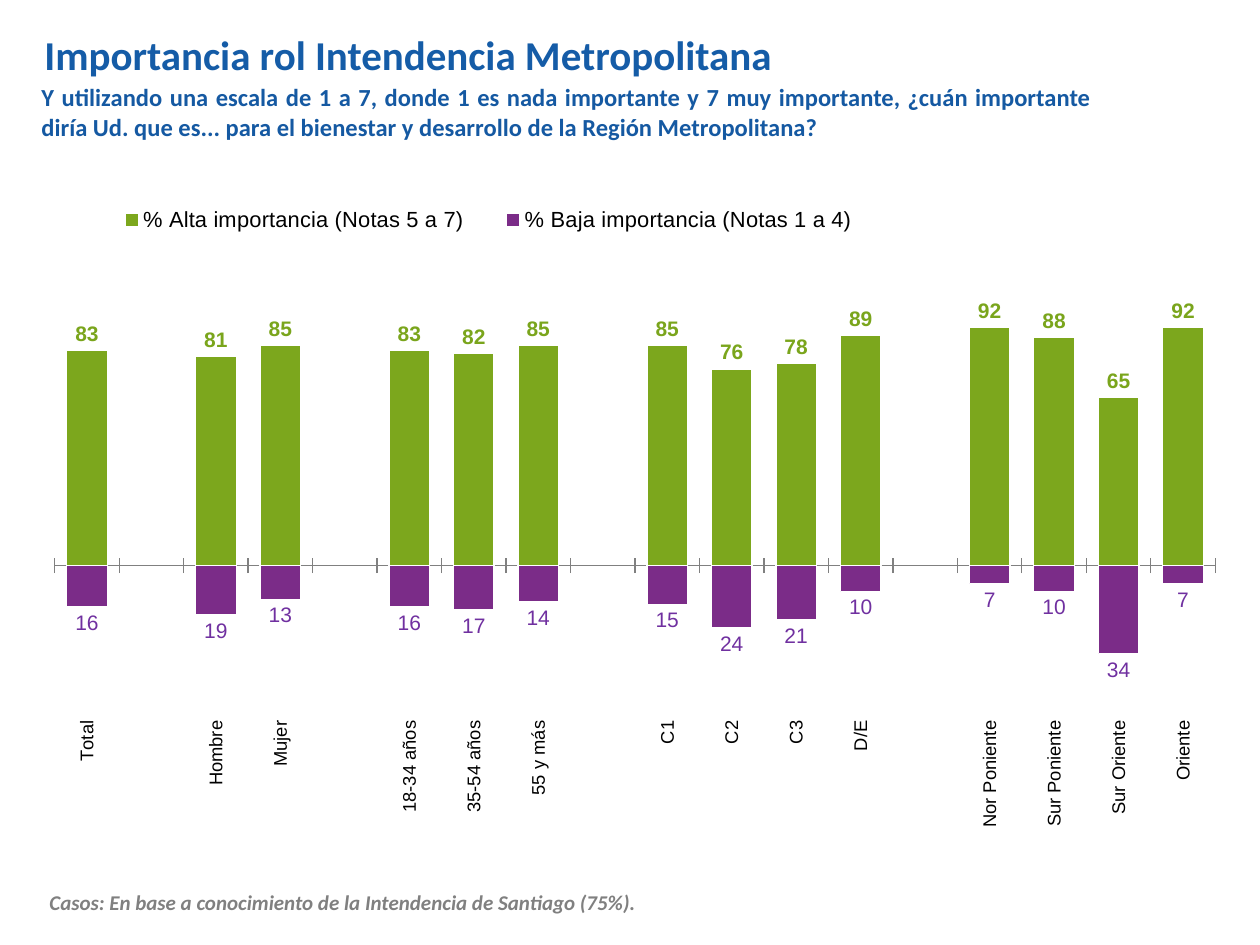
from pptx import Presentation
from pptx import util as u
from pptx.chart import data as chart_data
from pptx.dml import color
from pptx.enum import chart as ch, text
from pptx.oxml import parse_xml
from pptx.oxml import ns

COLORS = {"title": "155CA7", "question": "1559A2", "note": "808080", "axis": "808080",
          "high": "7CA71D", "high_label": "7AA51C", "low": "7B2C88", "low_label": "7030A0",
          "black": "000000", "white": "FFFFFF"}

GROUPS = [
    [("Total", 83, 16)],
    [("Hombre", 81, 19), ("Mujer", 85, 13)],
    [("18-34 años", 83, 16), ("35-54 años", 82, 17), ("55 y más", 85, 14)],
    [("C1", 85, 15), ("C2", 76, 24), ("C3", 78, 21), ("D/E", 89, 10)],
    [("Nor Poniente", 92, 7), ("Sur Poniente", 88, 10), ("Sur Oriente", 65, 34), ("Oriente", 92, 7)],
]


def px(length):
    return u.Emu(round(length * 914400 / 126))


def rgb(name):
    return color.RGBColor.from_string(COLORS[name])


class SlideBuilder:
    def __init__(self, slide, text_font="Calibri", chart_font="Arial"):
        self.slide = slide
        self.text_font = text_font
        self.chart_font = chart_font

    def style(self, font, name, size, ink, bold=False, italic=False):
        font.name, font.size = name, u.Pt(size)
        font.bold, font.italic = bold, italic
        font.color.rgb = rgb(ink)

    def text(self, words, place, size, ink, italic=False, align=text.PP_ALIGN.LEFT,
             anchor=text.MSO_ANCHOR.TOP, wrap=True, grow=False):
        box = self.slide.shapes.add_textbox(*map(px, place))
        frame = box.text_frame
        frame.word_wrap, frame.vertical_anchor = wrap, anchor
        if grow:
            frame.auto_size = text.MSO_AUTO_SIZE.SHAPE_TO_FIT_TEXT
        para = frame.paragraphs[0]
        para.text, para.alignment = words, align
        self.style(para.font, self.text_font, size, ink, True, italic)

    def layout(self, element, index, x, y, w, h, target=""):
        for old in element.findall(ns.qn("c:layout")):
            element.remove(old)
        sizes = "".join(f'<c:{tag} val="{value}"/>' for tag, value in
                        [("xMode", "edge"), ("yMode", "edge"), ("x", x), ("y", y), ("w", w), ("h", h)])
        element.insert(index, parse_xml(
            f'<c:layout {ns.nsdecls("c")}><c:manualLayout>{target}{sizes}</c:manualLayout></c:layout>'))

    def series(self, series, fill, label, bold):
        series.invert_if_negative = False
        series.format.fill.solid()
        series.format.fill.fore_color.rgb = rgb(fill)
        series.format.line.color.rgb = rgb("white")
        series.format.line.width = u.Pt(0.75)
        labels = series.data_labels
        labels.show_value = True
        labels.number_format, labels.number_format_is_linked = "#,##0;#,##0", False
        labels.position = ch.XL_LABEL_POSITION.OUTSIDE_END
        self.style(labels.font, self.chart_font, 12, label, bold)

    def chart(self, groups, place):
        rows = list(groups[0])
        for group in groups[1:]:
            rows += [("", None, None)] + group
        data = chart_data.CategoryChartData()
        data.categories = [row[0] for row in rows]
        data.add_series("% Alta importancia (Notas 5 a 7)", [row[1] for row in rows])
        data.add_series("% Baja importancia (Notas 1 a 4)",
                        [None if row[2] is None else -row[2] for row in rows])
        chart = self.slide.shapes.add_chart(
            ch.XL_CHART_TYPE.COLUMN_CLUSTERED, *map(px, place), data).chart
        chart.has_title = False
        self.style(chart.font, self.chart_font, 10, "black")

        plot = chart.plots[0]
        plot.vary_by_categories = False
        plot.gap_width, plot.overlap = 59, 100
        self.series(plot.series[0], "high", "high_label", True)
        self.series(plot.series[1], "low", "low_label", False)

        values = chart.value_axis
        values.minimum_scale, values.maximum_scale = -55, 110
        values.has_major_gridlines = False
        values.visible = False
        categories = chart.category_axis
        categories.tick_label_position = ch.XL_TICK_LABEL_POSITION.LOW
        categories.major_tick_mark = ch.XL_TICK_MARK.CROSS
        categories.format.line.color.rgb = rgb("axis")
        self.style(categories.tick_labels.font, self.chart_font, 10.5, "black")
        categories._element.txPr.bodyPr.set("rot", "-5400000")

        chart.has_legend = True
        legend = chart.legend
        legend.position = ch.XL_LEGEND_POSITION.TOP
        legend.include_in_layout = False
        self.style(legend.font, self.chart_font, 12.5, "black")
        self.layout(legend._element, 1, 0.04, 0, 0.68, 0.07)
        plot_area = chart._chartSpace.chart.plotArea
        self.layout(plot_area, 0, 0.01, 0.13, 0.99, 0.67, '<c:layoutTarget val="inner"/>')


def main():
    deck = Presentation()
    deck.slide_width, deck.slide_height = px(1260), px(945)
    page = SlideBuilder(deck.slides.add_slide(deck.slide_layouts[6]))
    page.text("Y utilizando una escala de 1 a 7, donde 1 es nada importante y 7 muy importante, "
              "¿cuán importante diría Ud. que es... para el bienestar y desarrollo de la Región "
              "Metropolitana?", (29, 76, 1075, 72), 14, "question",
              align=text.PP_ALIGN.JUSTIFY, grow=True)
    page.text("Importancia rol Intendencia Metropolitana", (32, 14, 1076, 81), 23.4, "title",
              anchor=text.MSO_ANCHOR.MIDDLE)
    page.chart(GROUPS, (43, 198, 1173, 638))
    page.text("Casos: En base a conocimiento de la Intendencia de Santiago (75%).",
              (37, 883, 712, 38), 12, "note", italic=True, wrap=False, grow=True)
    deck.save("out.pptx")


if __name__ == "__main__":
    main()
